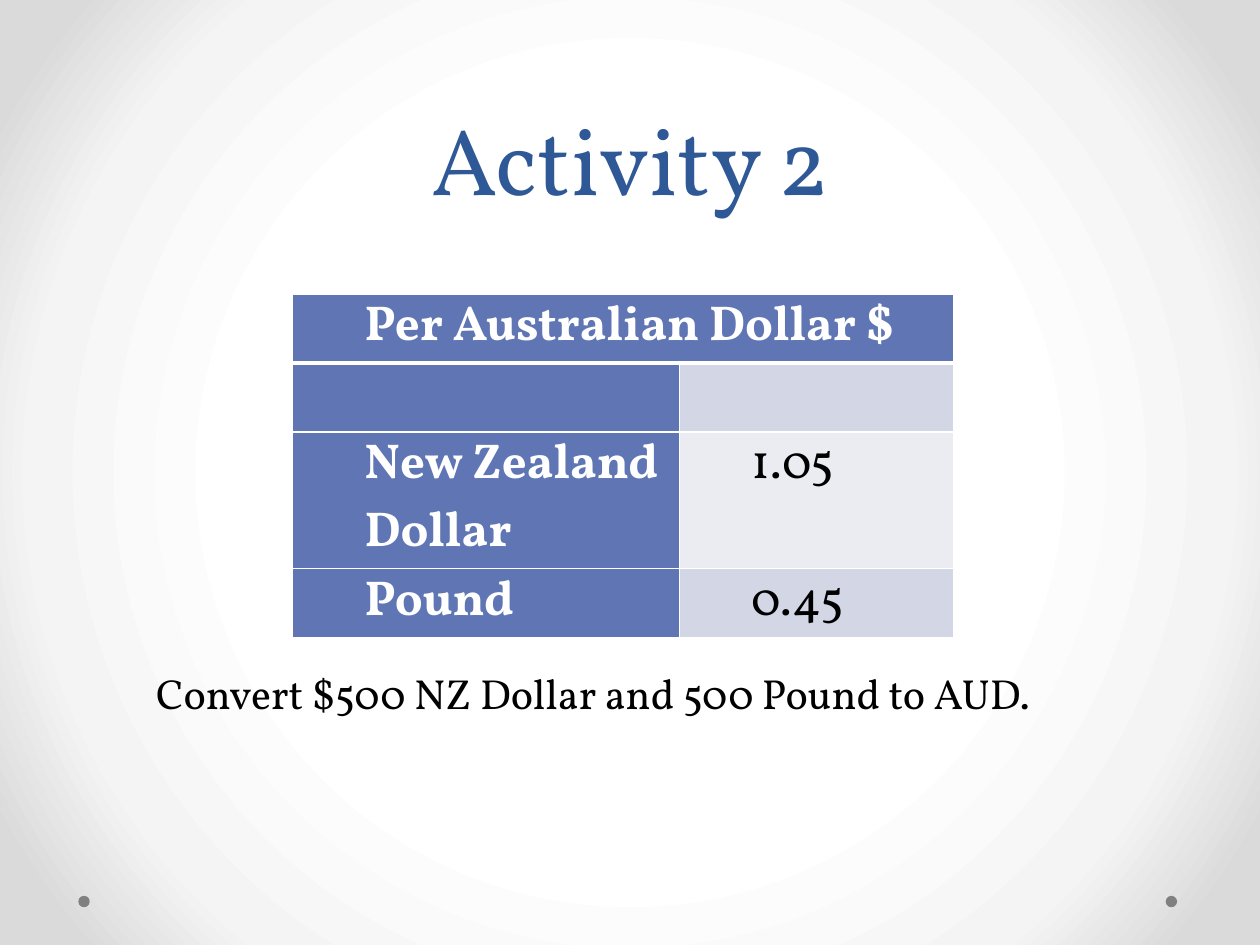
from dataclasses import dataclass

import lxml.etree
import pptx
import pptx.dml.color
import pptx.enum.shapes
import pptx.enum.text
import pptx.oxml.ns
import pptx.util

Cm = pptx.util.Cm
Pt = pptx.util.Pt
qn = pptx.oxml.ns.qn


@dataclass(frozen=True)
class Theme:
    font: str = "Vollkorn"
    title: str = "2F5897"
    ink: str = "000000"
    white: str = "FFFFFF"
    head: str = "6076B4"
    dark: str = "D2D6E5"
    light: str = "EAECF2"
    dot: str = "808080"
    glow: tuple = ((50, "FFFFFF"), (76, "F4F4F4"), (92, "DADADA"))
    large: int = 54
    medium: int = 28
    small: int = 24
    thin: int = 1
    thick: int = 3


@dataclass(frozen=True)
class Entry:
    text: str
    fill: str
    color: str
    bold: bool


THEME = Theme()


def rgb(code: str) -> pptx.dml.color.RGBColor:
    return pptx.dml.color.RGBColor.from_string(code)


def style(para, size: int, color: str, bold: bool = False) -> None:
    font = para.font
    font.name = THEME.font
    font.size = Pt(size)
    font.bold = bold
    font.color.rgb = rgb(color)


def add_glow(slide) -> None:
    slide.background.fill.gradient()
    grad = slide.element.find(".//" + qn("a:gradFill"))
    for child in list(grad):
        grad.remove(child)
    sub = lxml.etree.SubElement
    stops = sub(grad, qn("a:gsLst"))
    for place, color in THEME.glow:
        stop = sub(stops, qn("a:gs"), pos=str(place * 1000))
        sub(stop, qn("a:srgbClr"), val=color)
    route = sub(grad, qn("a:path"), {"path": "circle"})
    sub(route, qn("a:fillToRect"), {side: "50000" for side in "ltrb"})


def add_dot(slide, left: float) -> None:
    size = Cm(0.23)
    dot = slide.shapes.add_shape(
        pptx.enum.shapes.MSO_SHAPE.OVAL, Cm(left), Cm(18.06), size, size
    )
    dot.shadow.inherit = False
    dot.fill.solid()
    dot.fill.fore_color.rgb = rgb(THEME.dot)
    dot.line.fill.background()


def add_title(slide, text: str) -> None:
    title = slide.shapes.title
    title.left, title.top = Cm(1.27), Cm(0)
    title.width, title.height = Cm(22.86), Cm(4.45)
    frame = title.text_frame
    frame.text = text
    frame.auto_size = pptx.enum.text.MSO_AUTO_SIZE.NONE
    frame.vertical_anchor = pptx.enum.text.MSO_ANCHOR.BOTTOM
    para = frame.paragraphs[0]
    para.alignment = pptx.enum.text.PP_ALIGN.CENTER
    para.line_spacing = Pt(58)
    style(para, THEME.large, THEME.title)


def set_edges(cell, row: int) -> None:
    props = cell._tc.get_or_add_tcPr()
    heavy = {0: "lnB", 1: "lnT"}.get(row)
    for side in ("lnL", "lnR", "lnT", "lnB"):
        width = THEME.thick if side == heavy else THEME.thin
        line = lxml.etree.SubElement(props, qn(f"a:{side}"), w=str(Pt(width)))
        fill = lxml.etree.SubElement(line, qn("a:solidFill"))
        lxml.etree.SubElement(fill, qn("a:srgbClr"), val=THEME.white)


def fill_cell(cell, row: int, entry: Entry) -> None:
    set_edges(cell, row)
    cell.fill.solid()
    cell.fill.fore_color.rgb = rgb(entry.fill)
    cell.margin_left = cell.margin_right = Cm(0.18)
    cell.margin_top = cell.margin_bottom = Cm(0)
    if entry.text:
        cell.text = entry.text
        para = cell.text_frame.paragraphs[0]
        para._p.get_or_add_pPr().set("marL", str(Cm(1.27)))
        style(para, THEME.medium, entry.color, entry.bold)


def add_rates(slide, rows: list[tuple[str, str]]) -> None:
    widths = (7.8, 5.53)
    high = 1.39
    table = slide.shapes.add_table(
        len(rows), len(widths), Cm(5.9), Cm(5.93),
        Cm(sum(widths)), Cm(high * len(rows)),
    ).table
    for col, width in zip(table.columns, widths):
        col.width = Cm(width)
    table.cell(0, 0).merge(table.cell(0, 1))
    for i, (name, rate) in enumerate(rows):
        table.rows[i].height = Cm(high)
        band = THEME.dark if i % 2 else THEME.light
        fill = band if i else THEME.head
        fill_cell(table.cell(i, 0), i, Entry(name, THEME.head, THEME.white, True))
        fill_cell(table.cell(i, 1), i, Entry(rate, fill, THEME.ink, False))


def add_task(slide, text: str) -> None:
    box = slide.shapes.add_textbox(Cm(2.9), Cm(13.34), Cm(20.6), Cm(2.06))
    frame = box.text_frame
    frame.word_wrap = True
    frame.text = text
    style(frame.paragraphs[0], THEME.small, THEME.ink)


def main() -> None:
    deck = pptx.Presentation()
    deck.slide_width, deck.slide_height = Cm(25.4), Cm(19.05)
    slide = deck.slides.add_slide(deck.slide_layouts.get_by_name("Title Only"))
    add_glow(slide)
    for left in (23.5, 1.58):
        add_dot(slide, left)
    add_title(slide, "Activity 2")
    add_rates(slide, [
        ("Per Australian Dollar $", ""),
        ("", ""),
        ("New Zealand Dollar", "1.05"),
        ("Pound", "0.45"),
    ])
    add_task(slide, "Convert $500 NZ Dollar and 500 Pound to AUD.")
    deck.save("out.pptx")


if __name__ == "__main__":
    main()
